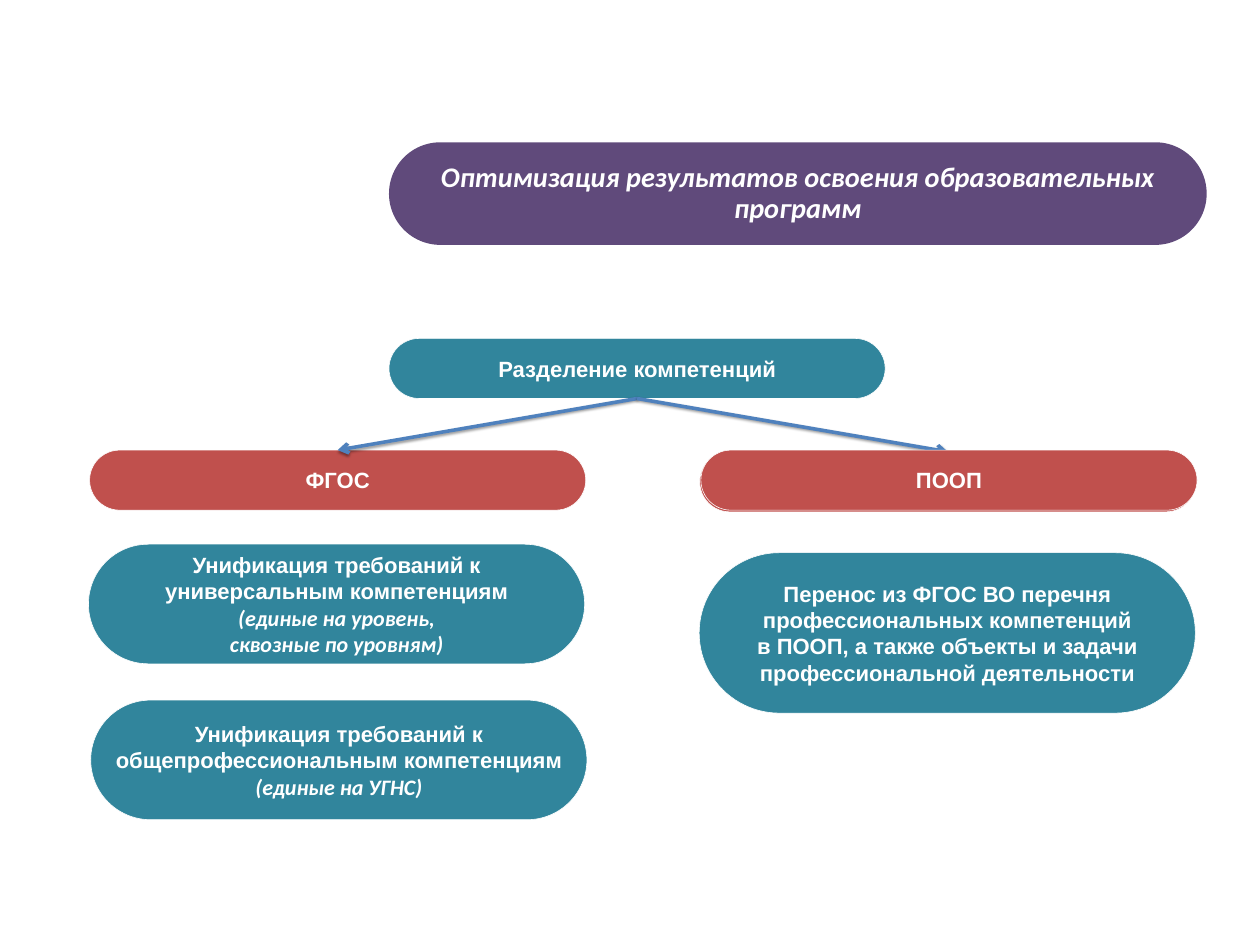
import pptx
import pptx.util
import pptx.dml.color
import pptx.enum.shapes
import pptx.enum.text
import pptx.oxml
import pptx.oxml.ns

Inches = pptx.util.Inches
Pt = pptx.util.Pt

WHITE, TEAL, RED, PLUM, BLUE = "FFFFFF", "31859C", "C0504D", "604A7B", "4F81BD"
WIDE = 8.75
BAR = 1.06

TITLE = (6.86, 2.51, 14.42, 1.81, PLUM,
         [("Оптимизация результатов освоения образовательных программ", True)])
ROOT = (6.86, 5.97, WIDE, BAR, TEAL, [("Разделение компетенций", False)])
LEFT = (1.58, 7.94, WIDE, BAR, RED, [("ФГОС", False)])
BACK = (12.34, 7.97, WIDE, BAR, RED, [])
RIGHT = (12.36, 7.94, WIDE, BAR, RED, [("ПООП", False)])
NOTES = [
    (1.56, 9.6, WIDE, 2.11, TEAL, [
        ("Унификация требований к универсальным компетенциям", False),
        ("(единые на уровень,", True),
        ("сквозные по уровням)", True)]),
    (12.33, 9.75, WIDE, 2.83, TEAL, [
        ("Перенос из ФГОС ВО перечня профессиональных компетенций", False),
        ("в ПООП, а также объекты и задачи профессиональной деятельности", False)]),
    (1.6, 12.35, WIDE, 2.11, TEAL, [
        ("Унификация требований к общепрофессиональным компетенциям", False),
        ("(единые на УГНС)", True)]),
]

SPACE = pptx.oxml.ns.nsdecls("a")
HEAD = f'<a:tailEnd {SPACE} type="arrow"/>'
SHADE = (f'<a:effectLst {SPACE}><a:outerShdw blurRad="{Pt(3.1)}" dist="{Pt(1.6)}" '
         'dir="5400000" rotWithShape="0"><a:srgbClr val="000000">'
         '<a:alpha val="38000"/></a:srgbClr></a:outerShdw></a:effectLst>')


def tint(part, code):
    part.rgb = pptx.dml.color.RGBColor.from_string(code)


def pill(slide, item, size=28, edge=True, lead=None):
    x, y, w, h, fill, lines = item
    shape = slide.shapes.add_shape(
        pptx.enum.shapes.MSO_SHAPE.ROUNDED_RECTANGLE,
        Inches(x), Inches(y), Inches(w), Inches(h))
    shape.adjustments[0] = 0.5
    shape.shadow.inherit = False
    shape.fill.solid()
    tint(shape.fill.fore_color, fill)
    if edge:
        tint(shape.line.color, WHITE)
        shape.line.width = Pt(0.75)
    else:
        shape.line.fill.background()
    frame = shape.text_frame
    frame.word_wrap = True
    frame.vertical_anchor = pptx.enum.text.MSO_ANCHOR.MIDDLE
    frame.text = "\n".join(text for text, slant in lines)
    for para, (text, slant) in zip(frame.paragraphs, lines):
        para.alignment = pptx.enum.text.PP_ALIGN.CENTER
        para.line_spacing = lead
        for run in para.runs:
            run.font.name = "Calibri" if slant else "Arial"
            run.font.size = Pt(size)
            run.font.bold = True
            run.font.italic = slant
            tint(run.font.color, WHITE)


def arrow(slide, start, end):
    x, y, w, h = start[:4]
    line = slide.shapes.add_connector(
        pptx.enum.shapes.MSO_CONNECTOR.STRAIGHT,
        Inches(x + w / 2), Inches(y + h),
        Inches(end[0] + end[2] / 2), Inches(end[1]))
    tint(line.line.color, BLUE)
    line.line.width = Pt(4.5)
    line.line._get_or_add_ln().append(pptx.oxml.parse_xml(HEAD))
    line._element.spPr.append(pptx.oxml.parse_xml(SHADE))


def main():
    deck = pptx.Presentation()
    deck.slide_width, deck.slide_height = Inches(22.22), Inches(16.67)
    slide = deck.slides.add_slide(deck.slide_layouts[6])
    pill(slide, TITLE, size=36, edge=False, lead=0.9)
    for item in NOTES + [ROOT, LEFT, BACK]:
        pill(slide, item)
    for end in (LEFT, BACK):
        arrow(slide, ROOT, end)
    pill(slide, RIGHT)
    deck.save("out.pptx")


if __name__ == "__main__":
    main()
